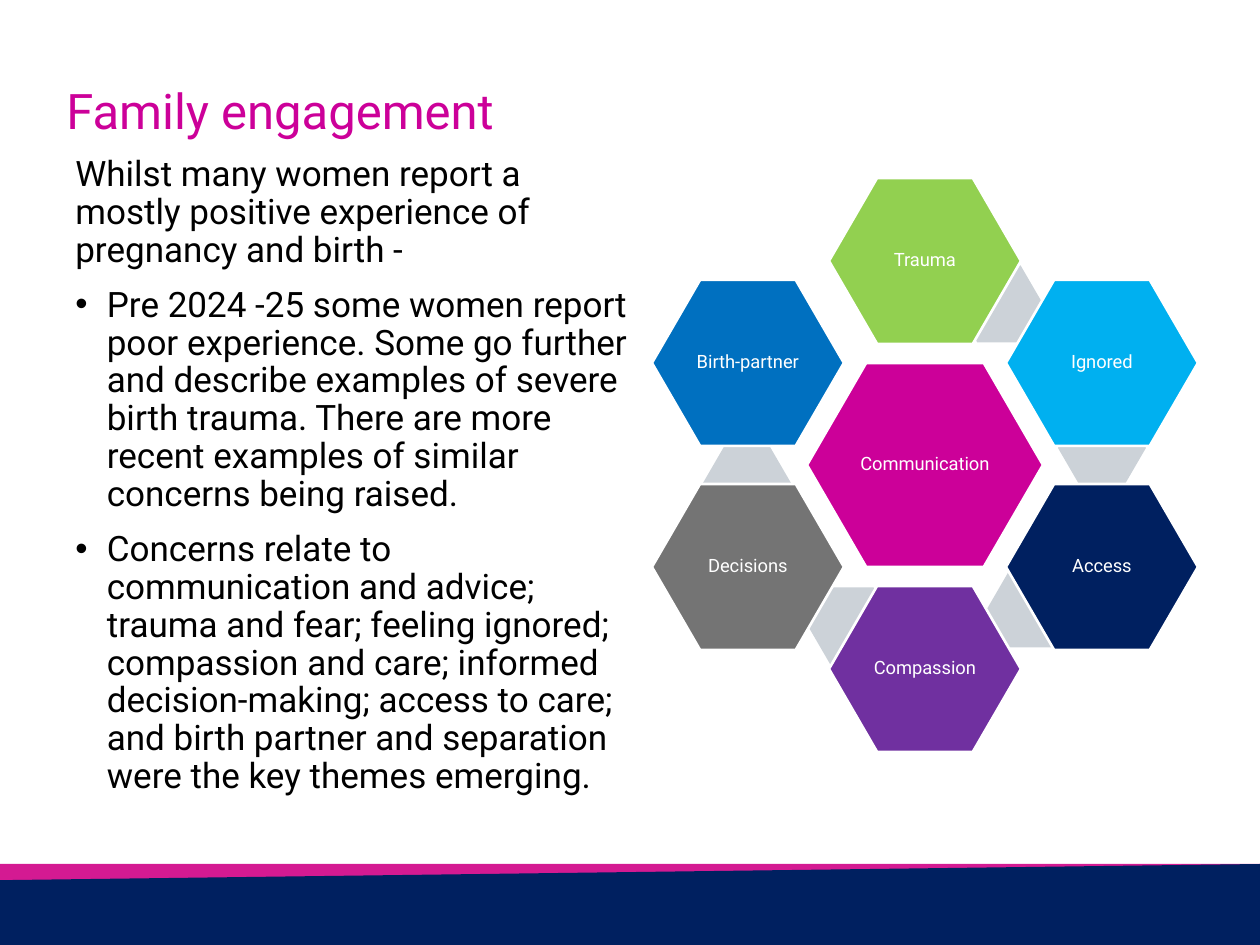
"""Build the family engagement slide with its ring of themes."""
from lxml.etree import SubElement
from pptx import Presentation
from pptx.dml.color import RGBColor
from pptx.enum.shapes import MSO_SHAPE as Shape
from pptx.enum.text import MSO_ANCHOR as Anchor, PP_ALIGN as Align
from pptx.oxml.ns import qn
from pptx.util import Emu, Pt

FONT = "Roboto"
MAGENTA, NAVY, WHITE, BLACK = "CC0099", "002060", "FFFFFF", "000000"
PINK, SPACER_GREY = "D41A92", "CCD2D8"
CENTRE_X, CENTRE_Y = 925, 465
RING_DX, RING_DY = 177, 102

BODY = [
    ("Whilst many women report a mostly positive experience of pregnancy and birth -", False),
    ("Pre 2024 -25 some women report poor experience. Some go further and describe "
     "examples of severe birth trauma. There are more recent examples of similar "
     "concerns being raised.", True),
    ("Concerns relate to communication and advice; trauma and fear; feeling ignored; "
     "compassion and care; informed decision-making; access to care; and birth partner "
     "and separation were the key themes emerging.", True),
]
THEMES = [
    ("Trauma", "92D050", 0, -2),
    ("Ignored", "00B0F0", 1, -1),
    ("Access", NAVY, 1, 1),
    ("Compassion", "7030A0", 0, 2),
    ("Decisions", "747474", -1, 1),
    ("Birth-partner", "0070C0", -1, -1),
]
SPACER_CENTRES = [(999, 304), (1102, 448), (1031, 609), (852, 626), (747, 483)]


def px(length):
    return Emu(round(length * 914400 / 126))


def colour(value):
    return RGBColor.from_string(value)


class SlideBuilder:
    """Draw styled elements on the current slide."""

    def __init__(self, slide):
        self.slide = slide

    def format_paragraph(self, paragraph, size, text_colour):
        paragraph.line_spacing = 0.9
        for run in paragraph.runs:
            run.font.name = FONT
            run.font.size = Pt(size)
            run.font.color.rgb = colour(text_colour)

    def bullet(self, paragraph):
        properties = paragraph._p.get_or_add_pPr()
        properties.set("marL", str(px(31.5)))
        properties.set("indent", str(px(-31.5)))
        SubElement(properties, qn("a:buFont"), typeface="Arial")
        SubElement(properties, qn("a:buChar"), char="•")

    def text(self, left, top, width, height, items, size, text_colour, space_before=0):
        box = self.slide.shapes.add_textbox(px(left), px(top), px(width), px(height))
        frame = box.text_frame
        frame.word_wrap = True
        frame.text = "\n".join(content for content, _ in items)
        for paragraph, (_, bulleted) in zip(frame.paragraphs, items):
            self.format_paragraph(paragraph, size, text_colour)
            paragraph.space_before = Pt(space_before)
            if bulleted:
                self.bullet(paragraph)

    def shape(self, kind, left, top, width, height, fill):
        shape = self.slide.shapes.add_shape(kind, px(left), px(top), px(width), px(height))
        shape.shadow.inherit = False
        shape.fill.solid()
        shape.fill.fore_color.rgb = colour(fill)
        shape.line.fill.background()
        return shape

    def hexagon(self, centre_x, centre_y, width, height, fill):
        hexagon = self.shape(Shape.HEXAGON, centre_x - width / 2, centre_y - height / 2,
                             width, height, fill)
        hexagon.adjustments[0] = 0.29
        return hexagon

    def theme(self, centre_x, centre_y, width, height, fill, label):
        hexagon = self.hexagon(centre_x, centre_y, width, height, fill)
        hexagon.line.color.rgb = colour(WHITE)
        hexagon.line.width = Pt(1.5)
        frame = hexagon.text_frame
        frame.margin_left = frame.margin_right = px(2)
        frame.margin_top = frame.margin_bottom = px(2)
        frame.vertical_anchor = Anchor.MIDDLE
        frame.text = label
        paragraph = frame.paragraphs[0]
        paragraph.alignment = Align.CENTER
        self.format_paragraph(paragraph, 10.5, WHITE)


def main():
    presentation = Presentation()
    presentation.slide_width, presentation.slide_height = px(1260), px(945)
    builder = SlideBuilder(presentation.slides.add_slide(presentation.slide_layouts[6]))

    builder.text(54, 81, 1086, 81, [("Family engagement", False)], 28, MAGENTA)
    builder.text(63, 150, 581, 500, BODY, 20, BLACK, space_before=10)

    for kind, fill in ((Shape.RECTANGLE, PINK), (Shape.FLOWCHART_MANUAL_INPUT, NAVY)):
        builder.shape(kind, 0, 864, 1260, 81, fill)

    builder.theme(CENTRE_X, CENTRE_Y, 236, 204, MAGENTA, "Communication")
    for centre_x, centre_y in SPACER_CENTRES:
        builder.hexagon(centre_x, centre_y, 88, 77, SPACER_GREY)
    for label, fill, column, row in THEMES:
        builder.theme(CENTRE_X + column * RING_DX, CENTRE_Y + row * RING_DY,
                      192, 166, fill, label)

    presentation.save("out.pptx")


if __name__ == "__main__":
    main()
